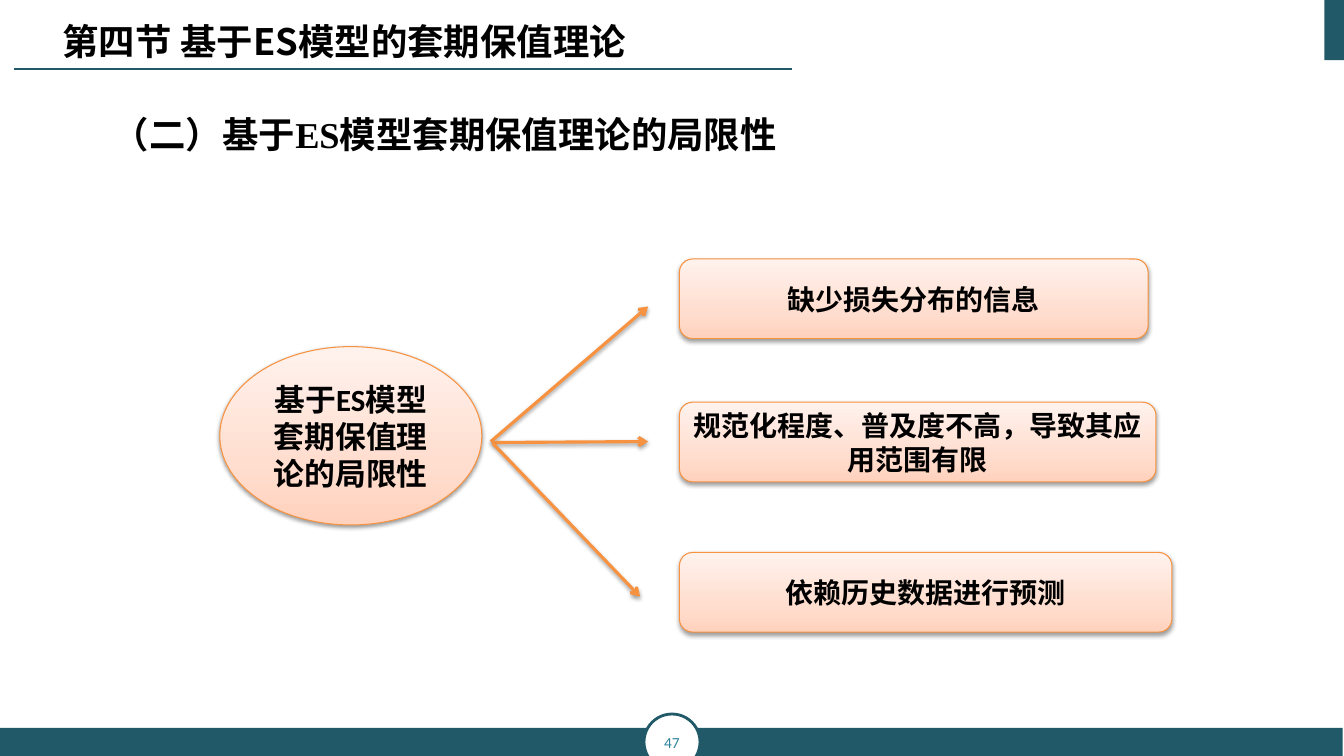
from pptx import Presentation
from pptx.dml.color import RGBColor
from pptx.enum.shapes import MSO_CONNECTOR, MSO_SHAPE
from pptx.enum.text import MSO_ANCHOR, MSO_AUTO_SIZE, PP_ALIGN
from pptx.oxml import parse_xml
from pptx.oxml.ns import qn
from pptx.util import Pt

RECT, OVAL = MSO_SHAPE.RECTANGLE, MSO_SHAPE.OVAL
ROUND = MSO_SHAPE.ROUNDED_RECTANGLE
LINE = MSO_CONNECTOR.STRAIGHT
LEFT, CENTER = PP_ALIGN.LEFT, PP_ALIGN.CENTER
TOP, MIDDLE = MSO_ANCHOR.TOP, MSO_ANCHOR.MIDDLE

TEAL = RGBColor(0x21, 0x59, 0x68)
AQUA = RGBColor(0x31, 0x85, 0x9C)
ORANGE = RGBColor(0xF6, 0x92, 0x40)
BLACK = RGBColor(0, 0, 0)
WHITE = RGBColor(0xFF, 0xFF, 0xFF)
PEACH = ((0, RGBColor(0xFF, 0xD2, 0xBD)),
         (35, RGBColor(0xFF, 0xDE, 0xD0)),
         (100, RGBColor(0xFF, 0xF2, 0xED)))

SANS, SERIF, LATIN = "Noto Sans CJK SC", "Times New Roman", "Calibri"
NS = 'xmlns:a="http://schemas.openxmlformats.org/drawingml/2006/main"'
WIDTH, HEIGHT = 960, 540


def pts(*nums):
    return [Pt(num) for num in nums]


def write(shape, text, size, face, color=BLACK, bold=True,
          align=CENTER, anchor=MIDDLE):
    frame = shape.text_frame
    frame.text = text
    frame.word_wrap = True
    frame.auto_size = MSO_AUTO_SIZE.NONE
    frame.vertical_anchor = anchor
    para = frame.paragraphs[0]
    para.alignment = align
    font = para.runs[0].font
    font.size, font.name, font.bold = Pt(size), face, bold
    font.color.rgb = color
    font._element.append(parse_xml(f'<a:ea {NS} typeface="{SANS}"/>'))
    return para


def shade(shape):
    """Add the soft drop shadow."""
    shape._element.spPr.append(parse_xml(
        f'<a:effectLst {NS}><a:outerShdw blurRad="{Pt(3.1)}" dist="{Pt(1.6)}" '
        'dir="5400000" rotWithShape="0"><a:srgbClr val="000000">'
        '<a:alpha val="38000"/></a:srgbClr></a:outerShdw></a:effectLst>'))


def flat(slide, kind, box, fill):
    shape = slide.shapes.add_shape(kind, *pts(*box))
    shape.shadow.inherit = False
    shape.fill.solid()
    shape.fill.fore_color.rgb = fill
    shape.line.fill.background()
    return shape


def peach(slide, kind, box, text, size, face):
    """Draw a labelled shape with the peach gradient."""
    shape = slide.shapes.add_shape(kind, *pts(*box))
    stops = "".join(
        f'<a:gs pos="{pos * 1000}"><a:srgbClr val="{color}"/></a:gs>'
        for pos, color in PEACH)
    shape._element.spPr.append(parse_xml(
        f'<a:gradFill {NS} rotWithShape="1"><a:gsLst>{stops}</a:gsLst>'
        '<a:lin ang="16200000" scaled="0"/></a:gradFill>'))
    shape.line.color.rgb = ORANGE
    shape.line.width = Pt(0.75)
    shade(shape)
    write(shape, text, size, face)


def rule(slide, start, end, color, width):
    line = slide.shapes.add_connector(LINE, *pts(*start, *end))
    line.line.color.rgb = color
    line.line.width = Pt(width)
    return line


def arrow(slide, start, end):
    line = rule(slide, start, end, ORANGE, 2.25)
    line.line._get_or_add_ln().append(
        parse_xml(f'<a:tailEnd {NS} type="arrow"/>'))
    shade(line)


def trim(slide, page):
    """Draw the corner tab, footer band, page badge and title rule."""
    flat(slide, RECT, (WIDTH - 14, 0, 14, 43), TEAL)
    flat(slide, RECT, (0, HEIGHT - 20, WIDTH - 1, 20), TEAL)
    badge = flat(slide, OVAL, (WIDTH / 2 - 20, HEIGHT - 30, 40, 40), WHITE)
    badge.line.color.rgb = TEAL
    badge.line.width = Pt(2)
    write(badge, page, 11, LATIN, AQUA, False)
    line = rule(slide, (566, 49), (10, 49), TEAL, 1.5)
    line._element.spPr.append(parse_xml(f'<a:effectLst {NS}/>'))


def place(holder, box):
    holder.left, holder.top, holder.width, holder.height = pts(*box)


def heads(slide, title, topic):
    head, body = slide.placeholders
    place(body, (37.5, 54.7, 901.5, 443.5))
    para = write(body, topic, 26, SERIF, align=LEFT, anchor=TOP)
    props = para._p.get_or_add_pPr()
    props.set("marL", "0")
    props.set("indent", str(Pt(36)))
    props.append(parse_xml(f'<a:buNone {NS}/>'))
    para.line_spacing = 1.7
    para.space_before = Pt(0)
    place(head, (37.5, 9.4, 561.5, 39))
    write(head, title, 26, SANS, align=LEFT)


def chart(slide, box, hub, limits):
    """Fan arrows out from the hub oval to one box per limit."""
    left, top = box
    peach(slide, OVAL, (left, top + 62.6, 187.2, 127.4), hub, 22, LATIN)
    for text, face, drop, width, start, end in limits:
        arrow(slide, (left + start[0], top + start[1]),
              (left + end[0], top + end[1]))
        peach(slide, ROUND, (left + 328.3, top + drop, width, 56.9),
              text, 20, face)


def main():
    deck = Presentation()
    deck.slide_width, deck.slide_height = pts(WIDTH, HEIGHT)
    slide = deck.slides.add_slide(deck.slide_layouts[1])
    trim(slide, "47")
    heads(slide, "第四节 基于ES模型的套期保值理论",
          "（二）基于ES模型套期保值理论的局限性")
    chart(slide, (157, 185), "基于ES模型套期保值理论的局限性", (
        ("缺少损失分布的信息", SERIF, 0, 334.8,
         (193.6, 130.4), (306, 33.9)),
        ("规范化程度、普及度不高，导致其应用范围有限", LATIN, 102.3, 340.4,
         (194.4, 131.1), (306, 130.4)),
        ("依赖历史数据进行预测", LATIN, 209.6, 351.8,
         (195.1, 131.8), (300.2, 241.2))))
    deck.save("out.pptx")


if __name__ == "__main__":
    main()
